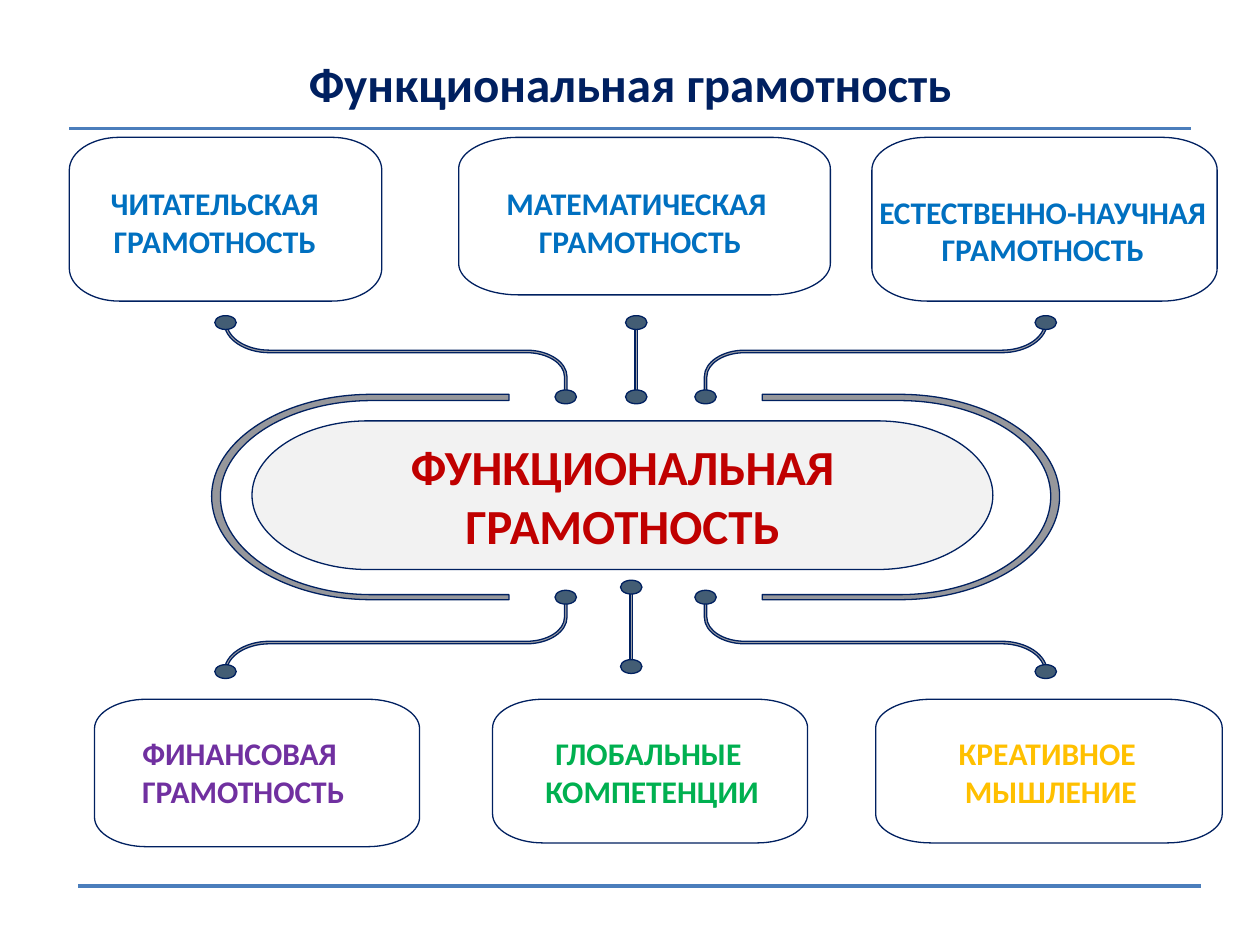
"""Build the slide on functional literacy and its six parts."""
import lxml.etree
import pptx
import pptx.dml.color
import pptx.enum.shapes
import pptx.enum.text
import pptx.oxml.ns
import pptx.util

RGB = pptx.dml.color.RGBColor
SHAPE = pptx.enum.shapes.MSO_SHAPE
ALIGN = pptx.enum.text.PP_ALIGN
MID = pptx.enum.text.MSO_ANCHOR.MIDDLE
qn = pptx.oxml.ns.qn

NAVY = RGB(0x00, 0x20, 0x60)
RULE = RGB(0x4B, 0x7E, 0xBC)
PALE = RGB(0xF2, 0xF2, 0xF2)
RED = RGB(0xC0, 0x00, 0x00)
GRAY = RGB(0x96, 0x97, 0x9B)
TRACK = RGB(0x9F, 0xA0, 0xA4)
SLATE = RGB(0x43, 0x5D, 0x74)
BLUE = RGB(0x00, 0x70, 0xC0)
PLUM = RGB(0x70, 0x30, 0xA0)
GREEN = RGB(0x00, 0xB0, 0x50)
GOLD = RGB(0xFF, 0xC0, 0x00)

PX = 9144
ROUND = 0.55
FONT = "Calibri"
TITLE = "Функциональная грамотность"
CORE = "ФУНКЦИОНАЛЬНАЯ ГРАМОТНОСТЬ"
RULES = [(55, 945, 102), (62, 953, 703)]
LEFT, MIDDLE = ALIGN.LEFT, ALIGN.CENTER
TOPICS = [
    ((55, 109, 248, 130), (78, 141, 193, 71), BLUE, LEFT, ["ЧИТАТЕЛЬСКАЯ", "ГРАМОТНОСТЬ"]),
    ((364, 109, 295, 125), (391, 141, 234, 71), BLUE, MIDDLE, ["МАТЕМАТИЧЕСКАЯ ", "ГРАМОТНОСТЬ"]),
    ((692, 109, 274, 130), (688, 148, 288, 71), BLUE, LEFT, ["ЕСТЕСТВЕННО-НАУЧНАЯ", "ГРАМОТНОСТЬ"]),
    ((75, 555, 258, 117), (102, 578, 182, 71), PLUM, MIDDLE, ["ФИНАНСОВАЯ ", "ГРАМОТНОСТЬ"]),
    ((391, 555, 250, 114), (422, 578, 191, 71), GREEN, MIDDLE, ["ГЛОБАЛЬНЫЕ ", "КОМПЕТЕНЦИИ"]),
    ((695, 555, 275, 114), (750, 578, 168, 71), GOLD, MIDDLE, ["КРЕАТИВНОЕ ", "МЫШЛЕНИЕ"]),
]
STEMS = [(505, 256, 315), (501, 466, 529)]
ENDS = [(179, 256), (449, 315)]
BEND = [
    (178, 256), (178, 280, 214, 280), (418, 280), (448, 280, 448, 299), (448, 316),
    (450, 316), (450, 299), (450, 278, 418, 278), (214, 278), (180, 278, 180, 256),
]
BRACE = [
    (605, 313), (714, 313), (841, 313, 841, 394), (841, 476, 714, 476), (605, 476),
    (605, 472), (714, 472), (834, 472, 834, 394), (834, 318, 714, 318), (605, 318),
]
FLIP_X, FLIP_Y = 1009, 789

deck = pptx.Presentation()
deck.slide_width, deck.slide_height = 1000 * PX, 750 * PX
slide = deck.slides.add_slide(deck.slide_layouts[5])
shapes = slide.shapes


def scale(*nums):
    return [round(n * PX) for n in nums]


def paint(shape, fill):
    shape.shadow.inherit = False
    shape.line.color.rgb = NAVY
    shape.line.width = pptx.util.Pt(0.75)
    if fill is None:
        shape.fill.background()
    else:
        shape.fill.solid()
        shape.fill.fore_color.rgb = fill
    return shape


def write(para, text, size, color, align):
    para.alignment = align
    run = para.add_run()
    run.text = text
    font = run.font
    font.name, font.size, font.bold = FONT, pptx.util.Pt(size), True
    font.color.rgb = color


def mirror(steps, across, down):
    flips = [(across, FLIP_X), (down, FLIP_Y)]
    return [
        tuple(flips[i % 2][1] - n if flips[i % 2][0] else n for i, n in enumerate(step))
        for step in steps
    ]


def curve(line, shape, start, bend, end):
    """Turn a straight step into a quarter ellipse."""
    near, far = [
        [a + ROUND * (b - a) for a, b in zip(spot, bend)] for spot in (start, end)
    ]
    line.tag = qn("a:cubicBezTo")
    for i, spot in enumerate((near, far)):
        x, y = scale(*spot)
        point = line.makeelement(qn("a:pt"), x=str(x - shape.left), y=str(y - shape.top))
        line.insert(i, point)


def draw(steps, fill):
    ends = [step[-2:] for step in steps]
    pen = shapes.build_freeform(*scale(*ends[0]))
    pen.add_line_segments([scale(*end) for end in ends[1:]], close=True)
    shape = pen.convert_to_shape()
    lines = list(shape._element.iter(qn("a:lnTo")))
    for line, start, step in zip(lines, ends, steps[1:]):
        if len(step) == 4:
            curve(line, shape, start, step[:2], step[2:])
    return paint(shape, fill)


def round_box(x, y, w, h, wide, high, fill=None):
    r, b = x + w, y + h
    return draw([
        (x + wide, y), (r - wide, y), (r, y, r, y + high), (r, b - high),
        (r, b, r - wide, b), (x + wide, b), (x, b, x, b - high),
        (x, y + high), (x, y, x + wide, y),
    ], fill)


def dot(x, y):
    paint(shapes.add_shape(SHAPE.OVAL, *scale(x - 8.5, y - 5.5, 17, 11)), SLATE)


def head():
    box = shapes.title
    box.left, box.top, box.width, box.height = scale(50, 30, 900, 72)
    box.text_frame.vertical_anchor = MID
    write(box.text_frame.paragraphs[0], TITLE, 28, NAVY, MIDDLE)
    for x, end, y in RULES:
        line = shapes.add_connector(pptx.enum.shapes.MSO_CONNECTOR.STRAIGHT, *scale(x, y, end, y))
        line.line.color.rgb = RULE
        line.line.width = pptx.util.Pt(2.25)
        lxml.etree.SubElement(line._element.spPr, qn("a:effectLst"))


def core():
    frame = round_box(200, 334, 588, 118, 92, 59, PALE).text_frame
    frame.word_wrap = True
    frame.vertical_anchor = MID
    frame.margin_left = frame.margin_right = frame.margin_top = frame.margin_bottom = 10 * PX
    write(frame.paragraphs[0], CORE, 28, RED, MIDDLE)
    for across in (False, True):
        draw(mirror(BRACE, across, False), GRAY)


def links():
    for down in (False, True):
        for across in (False, True):
            draw(mirror(BEND, across, down), TRACK)
            for spot in mirror(ENDS, across, down):
                dot(*spot)
    for x, top, end in STEMS:
        paint(shapes.add_shape(SHAPE.RECTANGLE, *scale(x - 1, top, 2, end - top)), TRACK)
        dot(x, top)
        dot(x, end)


def topics():
    for box, place, color, first, lines in TOPICS:
        round_box(*box, box[2] * 0.16, box[3] * 0.2)
        frame = shapes.add_textbox(*scale(*place)).text_frame
        frame.word_wrap = False
        for i, text in enumerate(lines):
            para = frame.add_paragraph() if i else frame.paragraphs[0]
            write(para, text, 18, color, MIDDLE if i else first)


head()
core()
links()
topics()
deck.save("out.pptx")
